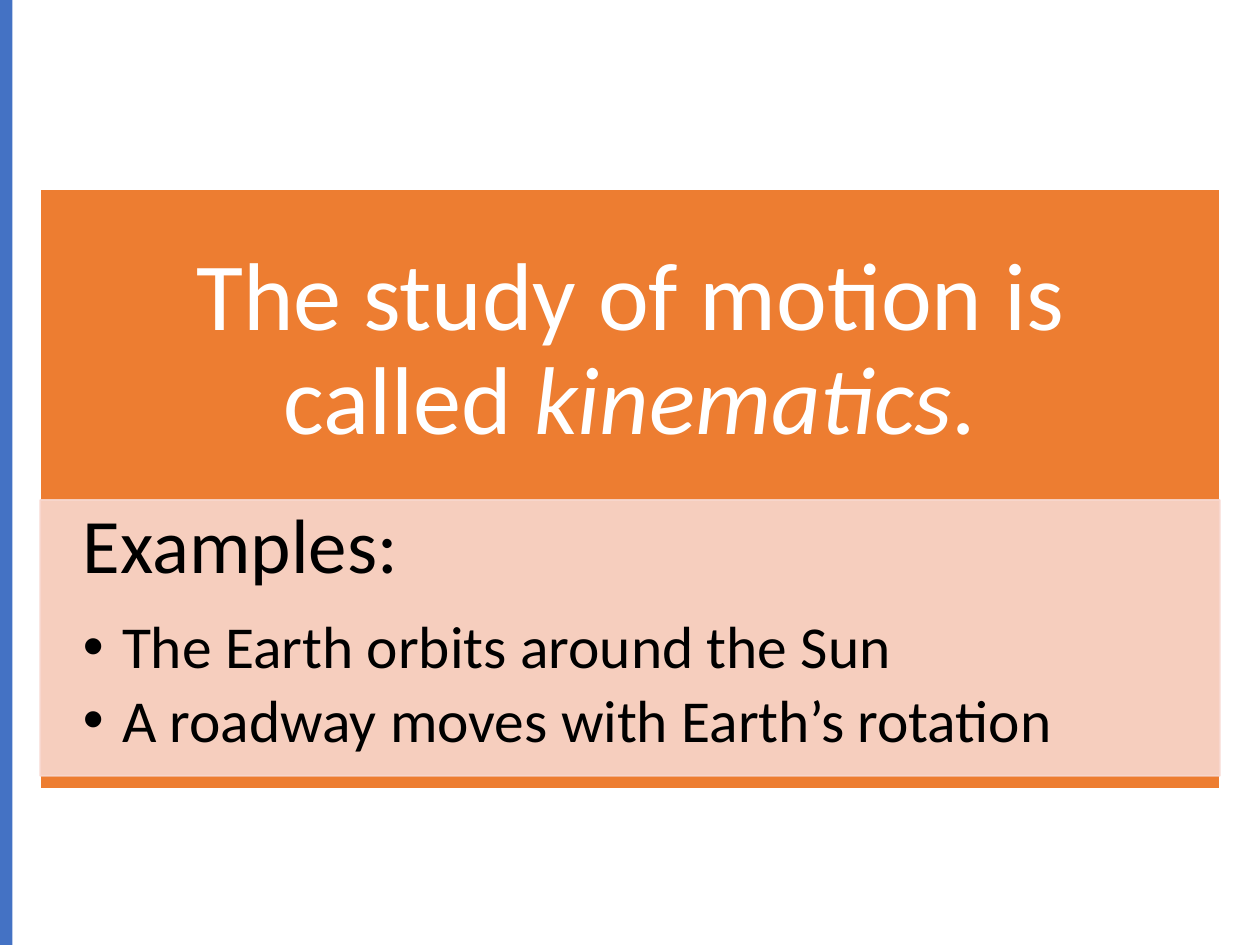
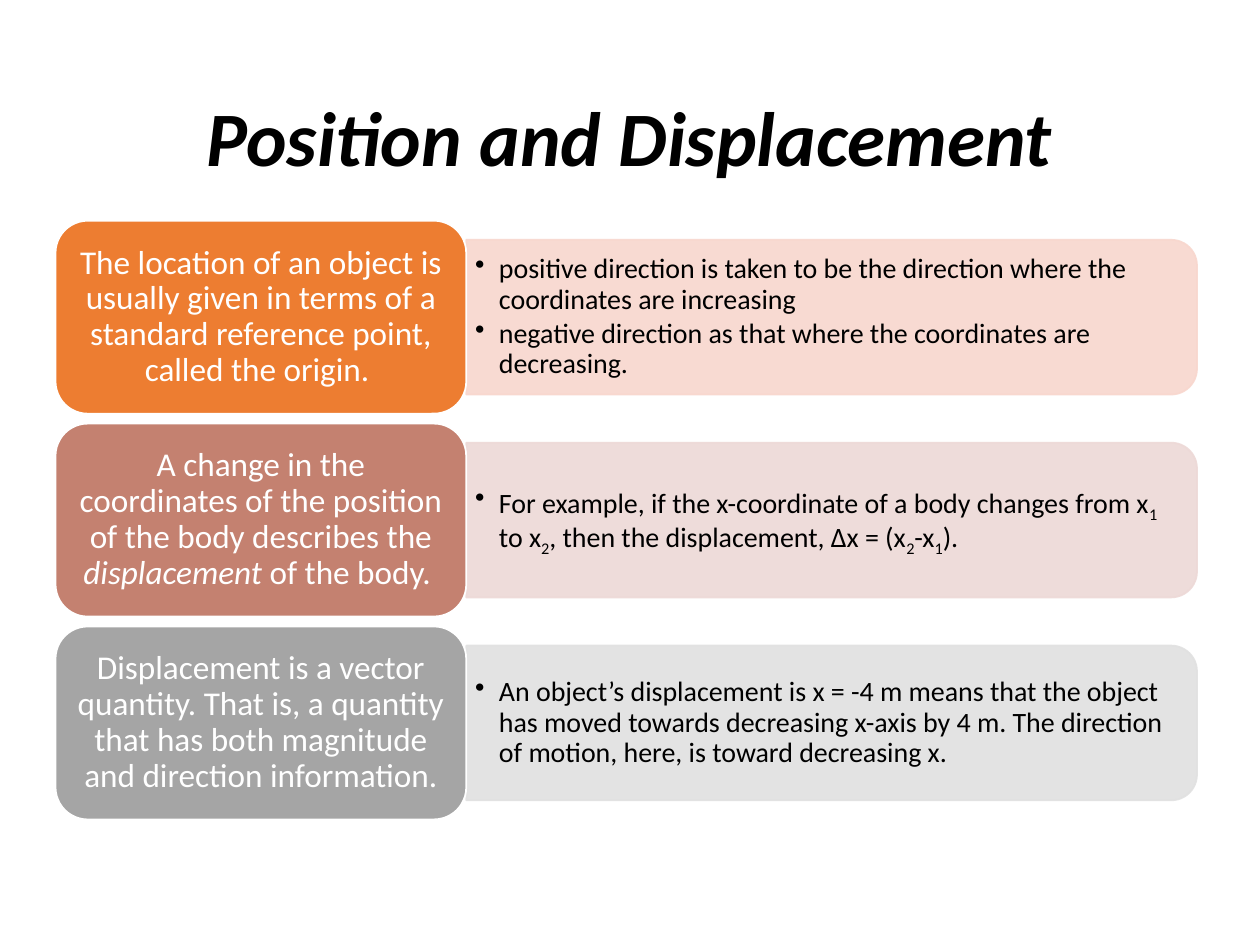
"""Build two slides on motion, position and displacement."""
from dataclasses import dataclass

import lxml.etree
import pptx
import pptx.dml.color
import pptx.enum.shapes
import pptx.enum.text
import pptx.oxml.ns
import pptx.shapes.autoshape
import pptx.slide
import pptx.text.text
import pptx.util

Cm = pptx.util.Cm
Pt = pptx.util.Pt
RGBColor = pptx.dml.color.RGBColor
FORM = pptx.enum.shapes.MSO_SHAPE
ALIGN = pptx.enum.text.PP_ALIGN
ANCHOR = pptx.enum.text.MSO_ANCHOR
qn = pptx.oxml.ns.qn

FONT = "Calibri"
BLACK = RGBColor(0x00, 0x00, 0x00)
WHITE = RGBColor(0xFF, 0xFF, 0xFF)
BLUE = RGBColor(0x44, 0x72, 0xC4)
ORANGE = RGBColor(0xED, 0x7D, 0x31)
ROSE = RGBColor(0xC4, 0x81, 0x70)
GREY = RGBColor(0xA5, 0xA5, 0xA5)
PEACH = RGBColor(0xF8, 0xD7, 0xCE)
BLUSH = RGBColor(0xED, 0xD9, 0xD7)
SILVER = RGBColor(0xE1, 0xE1, 0xE1)

WIDE, HIGH = 25.4, 19.05
ROW_TOP, ROW_STEP = 4.45, 4.09
KEY_LEFT, KEY_WIDE, KEY_HIGH = 1.12, 8.28, 3.89
NOTE_LEFT, NOTE_WIDE, NOTE_HIGH = 9.4, 14.73, 3.12
TEXT_WIDE, TEXT_HIGH = 14.58, 2.82


@dataclass(frozen=True)
class Box:
    """Place and size in centimetres."""
    left: float
    top: float
    wide: float
    high: float

    def spot(self) -> tuple[Cm, Cm, Cm, Cm]:
        """Return the four lengths."""
        return Cm(self.left), Cm(self.top), Cm(self.wide), Cm(self.high)


@dataclass(frozen=True)
class Style:
    """Look of a paragraph; after is a share of the type size."""
    size: float
    color: RGBColor = BLACK
    align: ALIGN = ALIGN.LEFT
    after: float = 0.35
    hang: float = 0
    bold: bool = False
    slant: bool = False
    lower: bool = False


@dataclass(frozen=True)
class Row:
    """A key statement with its notes; bars set off accented words."""
    key: str
    notes: tuple[str, ...]
    dark: RGBColor
    pale: RGBColor


HERO = Style(55, WHITE, ALIGN.CENTER)
HEAD = Style(44, align=ALIGN.CENTER, after=0.14, bold=True, slant=True)
LEAD = Style(44)
POINT = Style(34, after=0.15, hang=0.79)
KEY = Style(19, WHITE, ALIGN.CENTER)
NOTE = Style(16, after=0.15, hang=0.48, lower=True)

ROWS = (
    Row("The location of an object is usually given in terms of a standard "
        "reference point, called the origin. ",
        ("positive direction is taken to be the direction where the "
         "coordinates are increasing",
         "negative direction as that where the coordinates are decreasing."),
        ORANGE, PEACH),
    Row("A change in the coordinates of the position of the body describes "
        "the |displacement |of the body. ",
        ("For example, if the x-coordinate of a body changes from x|1| to x"
         "|2|, then the displacement, Δx = (x|2|-x|1|).",),
        ROSE, BLUSH),
    Row("Displacement is a vector quantity. That is, a quantity that has "
        "both magnitude and direction information.",
        ("An object’s displacement is x = -4 m means that the object has "
         "moved towards decreasing x-axis by 4 m. The direction of motion, "
         "here, is toward decreasing x.",),
        GREY, SILVER),
)


def paint(shape: pptx.shapes.autoshape.Shape, fill: RGBColor,
          line: RGBColor, solid: int = 100) -> None:
    """Fill and outline a shape at a given share of opacity."""
    shape.shadow.inherit = False
    shape.fill.solid()
    shape.fill.fore_color.rgb = fill
    shape.line.color.rgb = line
    shape.line.width = Pt(1)
    if solid < 100:
        for tint in shape._element.spPr.iter(qn("a:srgbClr")):
            lxml.etree.SubElement(tint, qn("a:alpha"), val=str(solid * 1000))


def draw(slide: pptx.slide.Slide, form: FORM, box: Box, fill: RGBColor,
         line: RGBColor, solid: int = 100) -> pptx.shapes.autoshape.Shape:
    """Add a painted preset shape."""
    shape = slide.shapes.add_shape(form, *box.spot())
    paint(shape, fill, line, solid)
    return shape


def place(shape: pptx.shapes.autoshape.Shape, box: Box) -> None:
    """Move a placeholder to a box, in front of all else."""
    shape.left, shape.top, shape.width, shape.height = box.spot()
    tree = shape._element.getparent()
    tree.append(shape._element)


def frame(shape: pptx.shapes.autoshape.Shape, side: float, edge: float,
          anchor: ANCHOR = ANCHOR.MIDDLE) -> pptx.text.text.TextFrame:
    """Set the wrap, insets and anchor of a text frame."""
    text = shape.text_frame
    text.word_wrap = True
    text.auto_size = pptx.enum.text.MSO_AUTO_SIZE.NONE
    text.vertical_anchor = anchor
    text.margin_left = text.margin_right = Cm(side)
    text.margin_top = text.margin_bottom = Cm(edge)
    return text


def style_line(line: pptx.text.text._Paragraph, style: Style) -> None:
    """Set the spacing, indent and bullet of a paragraph."""
    line.alignment = style.align
    line.line_spacing = 0.9
    line.space_before = Pt(0)
    line.space_after = Pt(round(style.size * style.after, 1))
    line.level = 1 if style.hang else 0
    props = line._p.get_or_add_pPr()
    props.set("marL", str(Cm(style.hang)))
    props.set("indent", str(-Cm(style.hang)))
    if style.hang:
        lxml.etree.SubElement(props, qn("a:buChar"), char="•")
    else:
        lxml.etree.SubElement(props, qn("a:buNone"))


def write(text: pptx.text.text.TextFrame,
          lines: list[tuple[str, Style]]) -> None:
    """Write paragraphs, with every second piece accented."""
    for count, (words, style) in enumerate(lines):
        line = text.add_paragraph() if count else text.paragraphs[0]
        style_line(line, style)
        for turn, piece in enumerate(words.split("|")):
            run = line.add_run()
            run.text = piece
            accent = turn % 2 == 1
            font = run.font
            font.name, font.size = FONT, Pt(style.size)
            font.bold = style.bold
            font.italic = style.slant or (accent and not style.lower)
            font.color.rgb = style.color
            if accent and style.lower:
                run._r.get_or_add_rPr().set("baseline", "-25000")


def draw_row(slide: pptx.slide.Slide, row: Row, top: float) -> None:
    """Draw a key box with its pale note panel."""
    mid = top + KEY_HIGH / 2
    panel = Box(NOTE_LEFT + (NOTE_WIDE - NOTE_HIGH) / 2, mid - NOTE_WIDE / 2,
                NOTE_HIGH, NOTE_WIDE)
    draw(slide, FORM.ROUND_2_SAME_RECTANGLE, panel, row.pale, row.pale,
         90).rotation = 90
    spot = Box(NOTE_LEFT, mid - TEXT_HIGH / 2, TEXT_WIDE, TEXT_HIGH)
    note = slide.shapes.add_textbox(*spot.spot())
    write(frame(note, 0.18, 0.08), [(words, NOTE) for words in row.notes])
    key = draw(slide, FORM.ROUNDED_RECTANGLE,
               Box(KEY_LEFT, top, KEY_WIDE, KEY_HIGH), row.dark, WHITE)
    write(frame(key, 0.2, 0.1), [(row.key, KEY)])


def show_motion(deck: pptx.presentation.Presentation) -> None:
    """Build the slide that defines the study of motion."""
    slide = deck.slides.add_slide(deck.slide_layouts[1])
    bar = draw(slide, FORM.RECTANGLE, Box(0, 0, 0.25, HIGH), BLUE, BLUE)
    bar.line.fill.background()
    draw(slide, FORM.RECTANGLE, Box(0.81, 3.81, 23.78, 12.09), ORANGE, WHITE)
    title, body = slide.placeholders
    place(title, Box(0.81, 3.81, 23.78, 6.53))
    write(frame(title, 1.09, 1.09),
          [("The study of motion is called |kinematics|.", HERO)])
    place(body, Box(0.81, 10.08, 23.78, 5.56))
    paint(body, PEACH, PEACH, 90)
    write(frame(body, 0.86, 0.15, ANCHOR.TOP),
          [("Examples:", LEAD),
           ("The Earth orbits around the Sun", POINT),
           ("A roadway moves with Earth’s rotation", POINT)])


def show_place(deck: pptx.presentation.Presentation) -> None:
    """Build the slide on position and displacement."""
    slide = deck.slides.add_slide(deck.slide_layouts[5])
    title = slide.shapes.title
    place(title, Box(1.75, 1.02, 21.89, 3.68))
    write(frame(title, 0.25, 0.13), [("Position and Displacement", HEAD)])
    for count, row in enumerate(ROWS):
        draw_row(slide, row, ROW_TOP + count * ROW_STEP)


def main() -> None:
    """Build and save the deck."""
    deck = pptx.Presentation()
    deck.slide_width, deck.slide_height = Cm(WIDE), Cm(HIGH)
    show_motion(deck)
    show_place(deck)
    deck.save("out.pptx")


if __name__ == "__main__":
    main()
